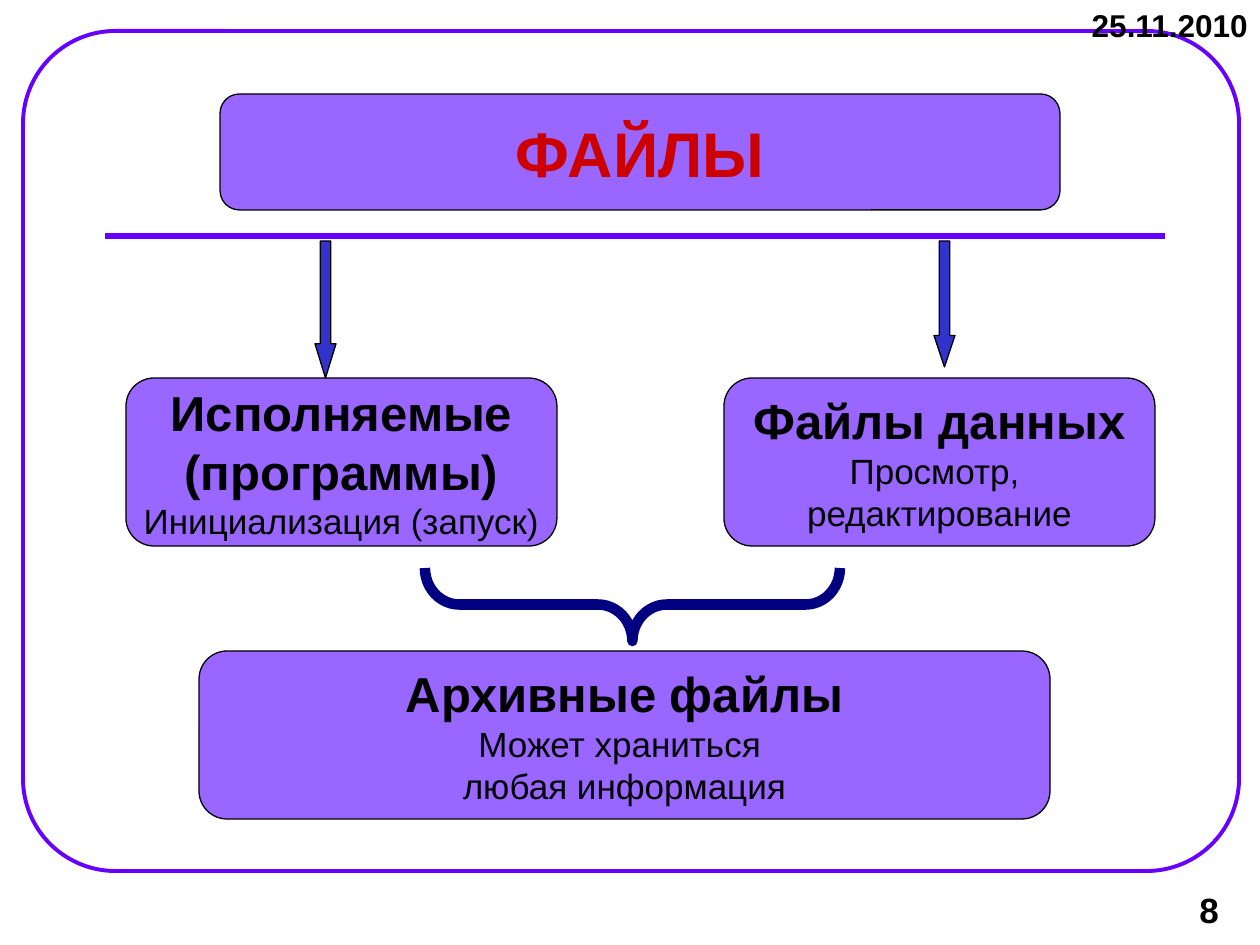
import pptx
import pptx.util
import pptx.dml.color
import pptx.enum.shapes
import pptx.enum.text
import pptx.oxml.ns
import lxml.etree

PX_PER_INCH = 126
FONT = "Arial"
COLORS = {
    "frame": "6600FF",
    "box": "9966FF",
    "title": "CC0000",
    "text": "000000",
    "outline": "000000",
    "arrow": "3333CC",
    "brace": "000080",
}
SHAPES = pptx.enum.shapes.MSO_SHAPE
ALIGN = pptx.enum.text.PP_ALIGN


def px(length):
    return pptx.util.Emu(round(length * 914400 / PX_PER_INCH))


def rgb(name):
    return pptx.dml.color.RGBColor.from_string(COLORS[name])


def write(paragraph, text, size=20, bold=False, color="text", align=ALIGN.CENTER):
    paragraph.alignment = align
    run = paragraph.add_run()
    run.text = text
    run.font.name = FONT
    run.font.size = pptx.util.Pt(size)
    run.font.bold = bold
    run.font.color.rgb = rgb(color)


def add_outline(slide, kind, bounds, adjustments, fill=None, line="outline", width=0.75):
    outline = slide.shapes.add_shape(kind, *map(px, bounds))
    outline.shadow.inherit = False
    for index, value in enumerate(adjustments):
        outline.adjustments[index] = value
    if fill:
        outline.fill.solid()
        outline.fill.fore_color.rgb = rgb(fill)
    else:
        outline.fill.background()
    outline.line.color.rgb = rgb(line)
    outline.line.width = pptx.util.Pt(width)
    return outline


def add_box(slide, bounds, lines):
    box = add_outline(slide, SHAPES.ROUNDED_RECTANGLE, bounds, [0.167], fill="box")
    frame = box.text_frame
    frame.word_wrap = False
    frame.vertical_anchor = pptx.enum.text.MSO_ANCHOR.MIDDLE
    for index, (text, style) in enumerate(lines):
        paragraph = frame.add_paragraph() if index else frame.paragraphs[0]
        write(paragraph, text, **style)


def add_label(slide, bounds, text, **style):
    label = slide.shapes.add_textbox(*map(px, bounds))
    label.text_frame.word_wrap = True
    write(label.text_frame.paragraphs[0], text, **style)


def add_rule(slide, left, right, y):
    rule = slide.shapes.add_connector(
        pptx.enum.shapes.MSO_CONNECTOR.STRAIGHT, px(left), px(y), px(right), px(y)
    )
    rule.line.color.rgb = rgb("frame")
    rule.line.width = pptx.util.Pt(3)
    properties = rule._element.spPr
    lxml.etree.SubElement(properties, pptx.oxml.ns.qn("a:effectLst"))


def add_arrow(slide, left, height, head):
    add_outline(slide, SHAPES.DOWN_ARROW, (left, 241, 21, height), [0.5, head], fill="arrow")


def main():
    presentation = pptx.Presentation()
    presentation.slide_width = px(1260)
    presentation.slide_height = px(945)
    slide = presentation.slides.add_slide(presentation.slide_layouts[6])

    add_outline(slide, SHAPES.ROUNDED_RECTANGLE, (23, 31, 1216, 840), [0.11],
                line="frame", width=2.25)
    add_rule(slide, 105, 1165, 236)

    title = {"size": 36, "bold": True, "color": "title"}
    heading = {"size": 28, "bold": True}
    detail = {"size": 20}
    add_box(slide, (220, 94, 840, 116), [("ФАЙЛЫ", title)])
    add_box(slide, (126, 378, 431, 168), [
        ("Исполняемые", heading),
        ("(программы)", heading),
        ("Инициализация (запуск)", detail),
    ])
    add_box(slide, (199, 651, 851, 168), [
        ("Архивные файлы", heading),
        ("Может храниться ", detail),
        ("любая информация", detail),
    ])
    add_box(slide, (724, 378, 431, 168), [
        ("Файлы данных", heading),
        ("Просмотр, ", detail),
        ("редактирование", detail),
    ])

    add_arrow(slide, 315, 137, 1.625)
    add_arrow(slide, 934, 126, 1.5)
    brace = add_outline(slide, SHAPES.LEFT_BRACE, (596, 397, 73, 415), [0.47, 0.5],
                        line="brace", width=6)
    brace.rotation = 270

    add_label(slide, (1040, 0, 220, 63), "25.11.2010", size=18, bold=True, align=ALIGN.RIGHT)
    add_label(slide, (1187, 882, 73, 63), "8", size=20, bold=True, align=ALIGN.LEFT)

    presentation.save("out.pptx")


if __name__ == "__main__":
    main()
